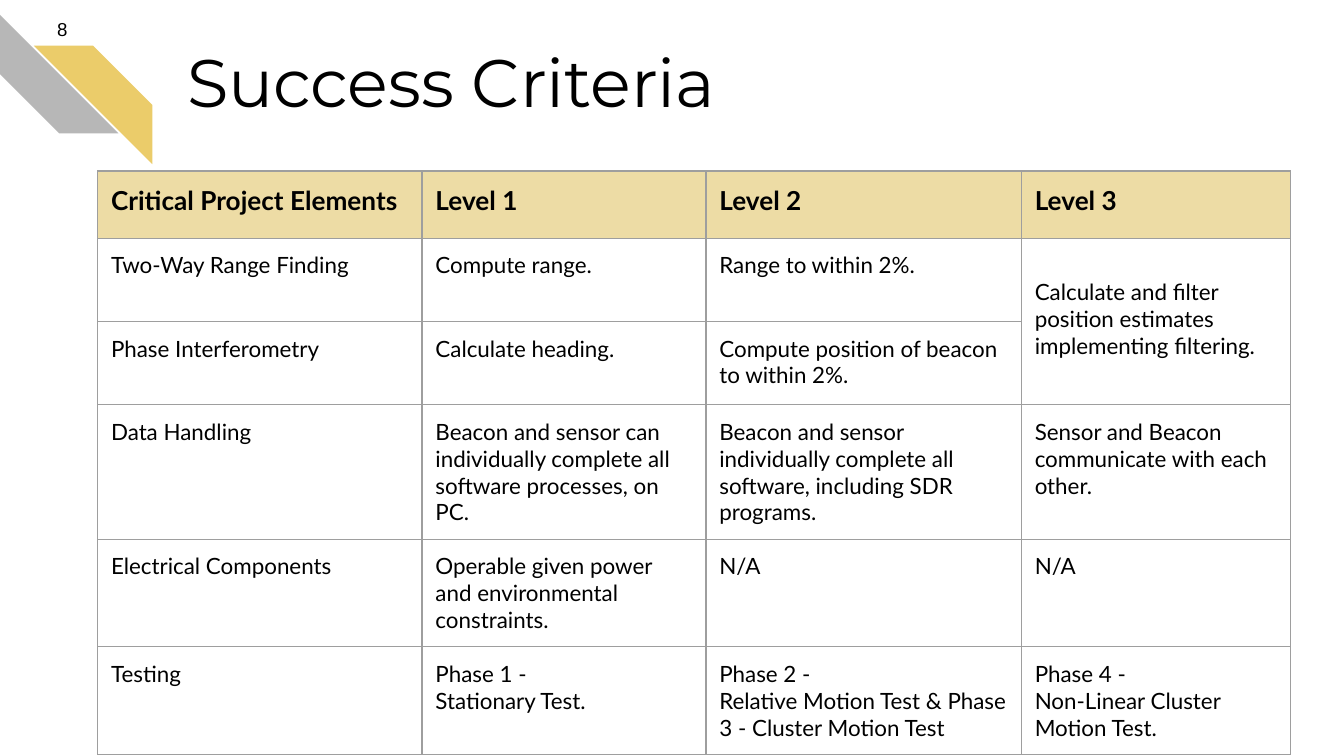
from lxml import etree
from pptx import Presentation
from pptx import util as u
from pptx.dml.color import RGBColor
from pptx.enum import shapes, text
from pptx.oxml import ns

BLACK, GREY, GOLD = "000000", "B7B7B7", "EBCC6A"
HEADER_FILL, BORDER = "EDDCA5", "9E9E9E"
INSET = 7.2

COLUMN_WIDTHS = [173.8, 152.1, 169, 144.1]
ROW_HEIGHTS = [36, 44.64, 44.64, 72, 57.6, 57.6]
CRITERIA = [
    ["Critical Project Elements", "Level 1", "Level 2", "Level 3"],
    ["Two-Way Range Finding", "Compute range.", "Range to within 2%.",
     "Calculate and filter position estimates implementing filtering."],
    ["Phase Interferometry", "Calculate heading.",
     "Compute position of beacon to within 2%.", None],
    ["Data Handling",
     "Beacon and sensor can individually complete all software processes, on PC.",
     "Beacon and sensor individually complete all software, including SDR programs.",
     "Sensor and Beacon communicate with each other."],
    ["Electrical Components",
     "Operable given power and environmental constraints.", "N/A", "N/A"],
    ["Testing", "Phase 1 -\nStationary Test.",
     "Phase 2 -\nRelative Motion Test & Phase 3 - Cluster Motion Test",
     "Phase 4 -\nNon-Linear Cluster Motion Test."],
]


def color(value):
    return RGBColor.from_string(value)


class SlideBuilder:
    def __init__(self, deck):
        self.slide = deck.slides.add_slide(deck.slide_layouts[5])

    def format_text(self, frame, content, size, font, bold=False,
                    align=text.PP_ALIGN.LEFT):
        frame.text = content
        for para in frame.paragraphs:
            para.alignment = align
            para.font.size = u.Pt(size)
            para.font.name = font
            para.font.bold = bold
            para.font.color.rgb = color(BLACK)

    def set_margins(self, holder):
        holder.margin_left = holder.margin_right = u.Pt(INSET)
        holder.margin_top = holder.margin_bottom = u.Pt(INSET)

    def format_frame(self, frame, anchor):
        frame.auto_size = text.MSO_AUTO_SIZE.NONE
        frame.word_wrap = True
        frame.vertical_anchor = anchor
        self.set_margins(frame)

    def stripe(self, left, top, size, fill, rotation=0, flip=False):
        shape = self.slide.shapes.add_shape(
            shapes.MSO_SHAPE.DIAGONAL_STRIPE,
            u.Pt(left), u.Pt(top), u.Pt(size), u.Pt(size))
        shape.adjustments[0] = 0.5
        shape.rotation = rotation
        shape.shadow.inherit = False
        shape.fill.solid()
        shape.fill.fore_color.rgb = color(fill)
        shape.line.fill.background()
        if flip:
            shape._element.spPr.xfrm.set("flipH", "1")

    def title(self, content, left, top, width, height):
        box = self.slide.shapes.title
        box.left, box.top = u.Pt(left), u.Pt(top)
        box.width, box.height = u.Pt(width), u.Pt(height)
        self.format_frame(box.text_frame, text.MSO_ANCHOR.TOP)
        self.format_text(box.text_frame, content, 36, "Montserrat")

    def page_number(self, content, left, top, width, height):
        box = self.slide.shapes.add_textbox(
            u.Pt(left), u.Pt(top), u.Pt(width), u.Pt(height))
        self.format_frame(box.text_frame, text.MSO_ANCHOR.MIDDLE)
        self.format_text(box.text_frame, content, 10, "Arial",
                         align=text.PP_ALIGN.RIGHT)

    def cell_borders(self, cell):
        properties = cell._tc.get_or_add_tcPr()
        for index, side in enumerate(("lnL", "lnR", "lnT", "lnB")):
            line = etree.Element(ns.qn(f"a:{side}"), w=str(u.Pt(0.75)))
            fill = etree.SubElement(line, ns.qn("a:solidFill"))
            etree.SubElement(fill, ns.qn("a:srgbClr"), val=BORDER)
            properties.insert(index, line)

    def table(self, left, top, widths, heights, rows):
        table = self.slide.shapes.add_table(
            len(rows), len(widths), u.Pt(left), u.Pt(top),
            u.Pt(sum(widths)), u.Pt(sum(heights))).table
        table.first_row = table.horz_banding = False
        for column, width in zip(table.columns, widths):
            column.width = u.Pt(width)
        for row, height in zip(table.rows, heights):
            row.height = u.Pt(height)
        for r, contents in enumerate(rows):
            for c, content in enumerate(contents):
                cell, header = table.cell(r, c), r == 0
                self.set_margins(cell)
                if header:
                    cell.fill.solid()
                    cell.fill.fore_color.rgb = color(HEADER_FILL)
                else:
                    cell.fill.background()
                self.cell_borders(cell)
                if content:
                    self.format_text(cell.text_frame, content,
                                     14 if header else 12, "Lato", header)
        return table


def main():
    deck = Presentation()
    deck.slide_width, deck.slide_height = u.Pt(720), u.Pt(405)
    page = SlideBuilder(deck)

    # Corner decoration
    page.stripe(0, 8, 63.5, GREY, rotation=270)
    page.stripe(18.2, 24.5, 63.5, GOLD, flip=True)

    # Heading and page number
    page.title("Success Criteria", 93, 14.4, 448, 46)
    page.page_number("8", 0, 0, 43.2, 31)

    # Criteria table: one Level 3 goal covers both ranging rows
    table = page.table(52.3, 91.6, COLUMN_WIDTHS, ROW_HEIGHTS, CRITERIA)
    shared_goal = table.cell(1, 3)
    shared_goal.merge(table.cell(2, 3))
    shared_goal.margin_top = u.Pt(INSET + 14.4)

    deck.save("out.pptx")


if __name__ == "__main__":
    main()
